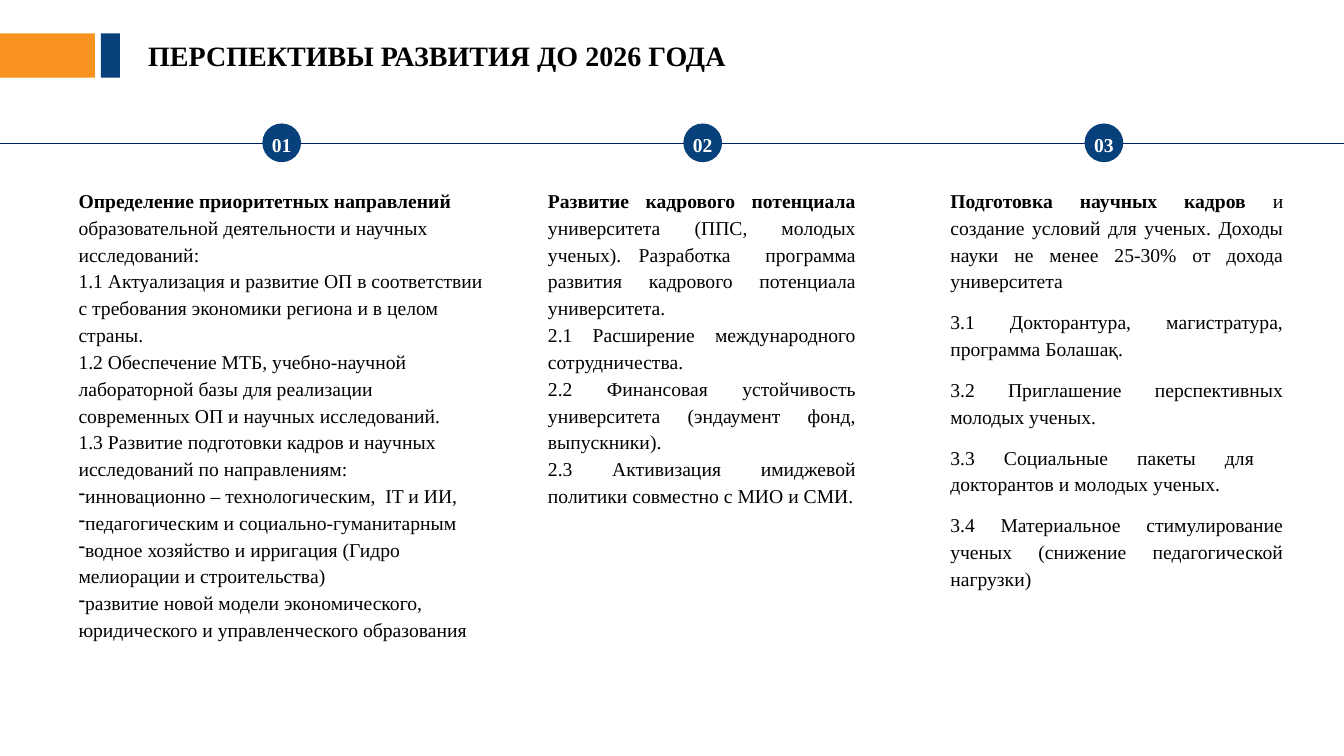
from lxml import etree
from pptx import Presentation
from pptx.dml.color import RGBColor
from pptx.enum import shapes, text
from pptx.oxml.ns import qn
from pptx.util import Cm, Pt

# Content
TITLE = "ПЕРСПЕКТИВЫ РАЗВИТИЯ ДО 2026 ГОДА"
DASH = "-"  # leading mark of a bulleted paragraph
COLUMNS = [
    dict(left=1.73, width=10.72, height=12.55, center=7.1, justify=False, gap=0,
         lead="Определение приоритетных направлений ",
         rest="образовательной деятельности и научных исследований:",
         items=[
             "1.1 Актуализация и развитие ОП в соответствии с требования экономики региона и в целом страны.",
             "1.2 Обеспечение МТБ, учебно-научной лабораторной базы для реализации современных ОП и научных исследований.",
             "1.3 Развитие подготовки кадров и научных исследований по направлениям:",
             "-инновационно – технологическим,  IT и ИИ,",
             "-педагогическим и социально-гуманитарным",
             "-водное хозяйство и ирригация (Гидро мелиорации и строительства)",
             "-развитие новой модели экономического, юридического и управленческого образования",
         ]),
    dict(left=13.56, width=8.26, height=8.43, center=17.71, justify=True, gap=0,
         lead="Развитие кадрового потенциала ",
         rest="университета (ППС, молодых ученых). Разработка  программа развития кадрового потенциала университета.",
         items=[
             "2.1 Расширение международного сотрудничества.",
             "2.2 Финансовая устойчивость университета (эндаумент фонд, выпускники).",
             "2.3 Активизация имиджевой политики совместно с МИО и СМИ.",
         ]),
    dict(left=23.7, width=8.89, height=10.54, center=27.82, justify=True, gap=10,
         lead="Подготовка научных кадров ",
         rest="и создание условий для ученых. Доходы науки не менее 25-30% от дохода университета",
         items=[
             "3.1 Докторантура, магистратура, программа Болашақ.",
             "3.2 Приглашение перспективных молодых ученых.",
             "3.3 Социальные пакеты для  докторантов и молодых ученых.",
             "3.4 Материальное стимулирование ученых (снижение педагогической нагрузки)",
         ]),
]

ORANGE = RGBColor(0xF7, 0x93, 0x1E)
BLUE = RGBColor(0x07, 0x40, 0x7B)
NAVY = RGBColor(0x00, 0x20, 0x60)
BLACK = RGBColor(0, 0, 0)
WHITE = RGBColor(0xFF, 0xFF, 0xFF)
FONT = "Times New Roman"
LINE_SPACING = 1.14

# Layout in centimetres
SLIDE_W, SLIDE_H = 33.87, 19.05
HEAD_TOP, HEAD_H = 0.84, 1.12
AXIS_Y, BADGE_D = 3.6, 0.94
BODY_TOP = 4.55


def format_run(r, size, color, bold=False):
    r.font.name = FONT
    r.font.size = Pt(size)
    r.font.color.rgb = color
    r.font.bold = bold


def add_block(slide, kind, left, top, width, height, color):
    sp = slide.shapes.add_shape(kind, Cm(left), Cm(top), Cm(width), Cm(height))
    sp.shadow.inherit = False
    sp.fill.solid()
    sp.fill.fore_color.rgb = color
    sp.line.fill.background()
    return sp


def add_title(slide):
    sp = slide.shapes.title
    sp.left, sp.top, sp.width, sp.height = Cm(3.48), Cm(HEAD_TOP), Cm(15.72), Cm(HEAD_H)
    tf = sp.text_frame
    tf.text = TITLE
    tf.auto_size = text.MSO_AUTO_SIZE.NONE
    tf.vertical_anchor = text.MSO_ANCHOR.MIDDLE
    p = tf.paragraphs[0]
    p.alignment = text.PP_ALIGN.LEFT
    format_run(p.runs[0], 20, BLACK, True)


def add_axis(slide):
    line = slide.shapes.add_connector(
        shapes.MSO_CONNECTOR.STRAIGHT, 0, Cm(AXIS_Y), Cm(SLIDE_W), Cm(AXIS_Y))
    line.line.color.rgb = NAVY
    line.line.width = Pt(0.5)
    etree.SubElement(line._element.spPr, qn("a:effectLst"))


def add_badge(slide, number, center):
    sp = add_block(slide, shapes.MSO_SHAPE.OVAL, center - BADGE_D / 2,
                   AXIS_Y - BADGE_D / 2, BADGE_D, BADGE_D, BLUE)
    sp.line.color.rgb = BLUE
    sp.line.width = Pt(1)
    tf = sp.text_frame
    tf.margin_left = tf.margin_right = tf.margin_top = tf.margin_bottom = 0
    tf.word_wrap = False
    tf.vertical_anchor = text.MSO_ANCHOR.MIDDLE
    tf.text = f"{number:02d}"
    p = tf.paragraphs[0]
    p.alignment = text.PP_ALIGN.CENTER
    p.line_spacing = LINE_SPACING
    format_run(p.runs[0], 14, WHITE, True)


def add_column(slide, col):
    sp = slide.shapes.add_textbox(Cm(col["left"]), Cm(BODY_TOP), Cm(col["width"]), Cm(col["height"]))
    tf = sp.text_frame
    tf.word_wrap = True
    tf.auto_size = text.MSO_AUTO_SIZE.SHAPE_TO_FIT_TEXT
    paragraphs = [[(col["lead"], True), (col["rest"], False)]]
    paragraphs += [[(item, False)] for item in col["items"]]
    for i, runs in enumerate(paragraphs):
        p = tf.add_paragraph() if i else tf.paragraphs[0]
        p.alignment = text.PP_ALIGN.JUSTIFY if col["justify"] else text.PP_ALIGN.LEFT
        p.line_spacing = LINE_SPACING
        p.space_before = Pt(col["gap"])
        if runs[0][0].startswith(DASH):
            etree.SubElement(p._p.get_or_add_pPr(), qn("a:buChar"), char=DASH)
        for words, bold in runs:
            r = p.add_run()
            r.text = words.removeprefix(DASH)
            format_run(r, 14, BLACK, bold)


def main():
    prs = Presentation()
    prs.slide_width, prs.slide_height = Cm(SLIDE_W), Cm(SLIDE_H)
    slide = prs.slides.add_slide(prs.slide_layouts[5])

    # Heading with its two colour bars
    add_title(slide)
    for left, width, color in [(0, 2.39, ORANGE), (2.54, 0.48, BLUE)]:
        add_block(slide, shapes.MSO_SHAPE.RECTANGLE, left, HEAD_TOP, width, HEAD_H, color)

    # Timeline with one numbered column per stage
    add_axis(slide)
    for number, col in enumerate(COLUMNS, 1):
        add_badge(slide, number, col["center"])
        add_column(slide, col)

    prs.save("out.pptx")


if __name__ == "__main__":
    main()
